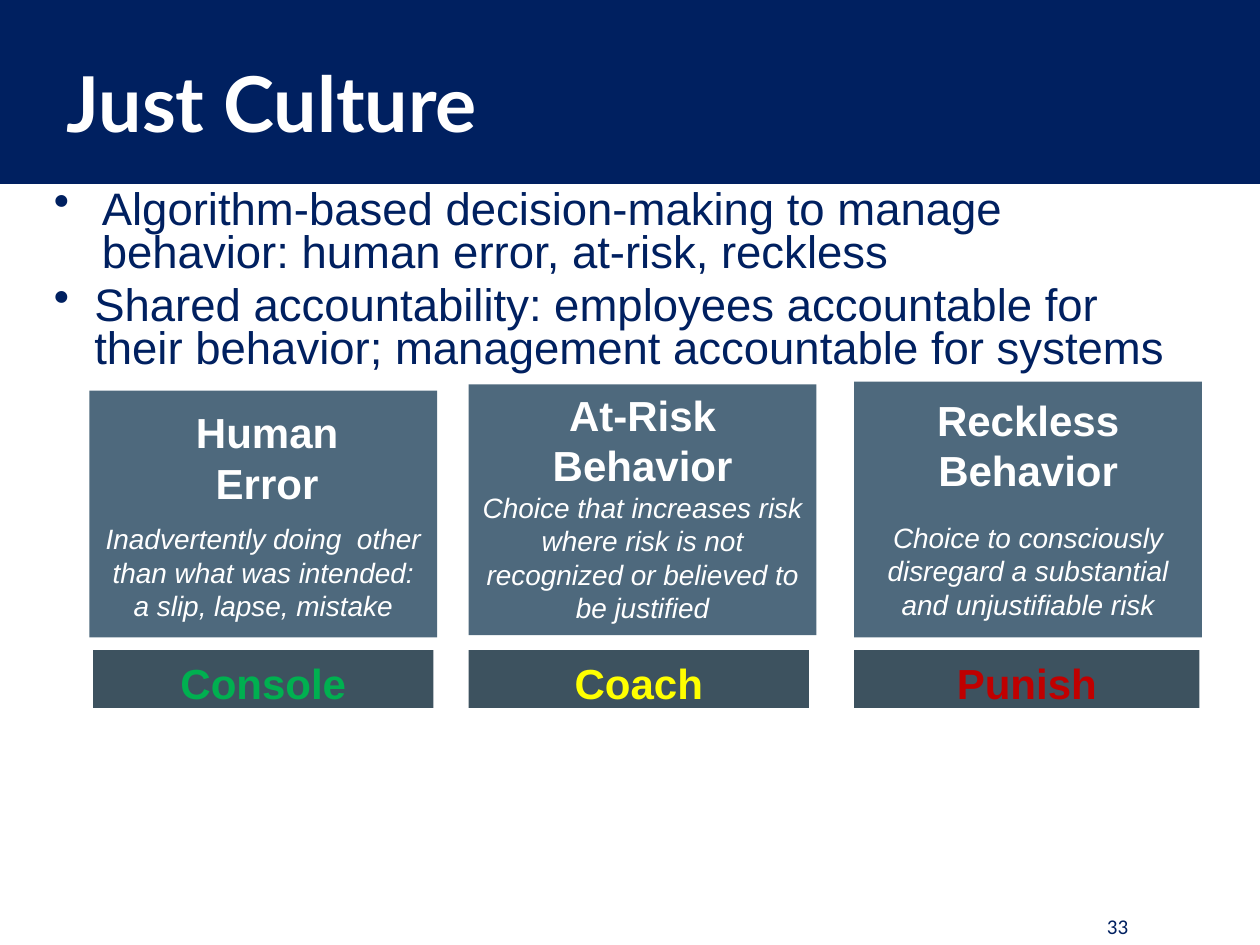
from lxml import etree
from pptx import Presentation
from pptx.dml.color import RGBColor
from pptx.enum import shapes, text
from pptx.oxml import ns
from pptx.util import Inches, Pt

NAVY = RGBColor(0x00, 0x20, 0x60)
WHITE = RGBColor(0xFF, 0xFF, 0xFF)
SLATE = RGBColor(0x4E, 0x69, 0x7D)
DARK_SLATE = RGBColor(0x3D, 0x52, 0x5F)
GREEN = RGBColor(0x00, 0xB0, 0x50)
YELLOW = RGBColor(0xFF, 0xFF, 0x00)
RED = RGBColor(0xC0, 0x00, 0x00)

BULLETS = [
    ("Algorithm-based decision-making to manage behavior: "
     "human error, at-risk, reckless", 0.38),
    ("Shared accountability: employees accountable for their behavior; "
     "management accountable for systems", 0.32),
]

# box, heading lines, heading (left, top), description, description top
CARDS = [
    ((0.71, 3.1, 2.76, 1.96), ["Human", "Error"], (0.03, 0.07),
     "Inadvertently doing  other than what was intended: a slip, lapse, mistake", 0.98),
    ((3.72, 3.05, 2.76, 1.99), ["At-Risk", "Behavior"], (0, -0.02),
     "Choice that increases risk where risk is not recognized "
     "or believed to be justified", 0.78),
    ((6.78, 3.03, 2.76, 2.03), ["Reckless", "Behavior"], (0, 0.04),
     "Choice to consciously disregard a substantial and unjustifiable risk", 1.04),
]

RESPONSES = [
    ("Console", GREEN, 0.74, 2.7),
    ("Coach", YELLOW, 3.72, 2.7),
    ("Punish", RED, 6.78, 2.74),
]


def add_rect(slide, box, color):
    """Add a plain filled rectangle."""
    sp = slide.shapes.add_shape(shapes.MSO_SHAPE.RECTANGLE, *map(Inches, box))
    sp.shadow.inherit = False
    sp.fill.solid()
    sp.fill.fore_color.rgb = color
    sp.line.fill.background()
    return sp


def write(sp, lines, size, color, name="Arial", bold=False, italic=False,
          align=text.PP_ALIGN.CENTER, anchor=text.MSO_ANCHOR.TOP, insets=(0.11, 0.06)):
    """Fill a shape with evenly styled paragraphs and return its text frame."""
    tf = sp.text_frame
    tf.word_wrap = True
    tf.vertical_anchor = anchor
    tf.margin_left = tf.margin_right = Inches(insets[0])
    tf.margin_top = tf.margin_bottom = Inches(insets[1])
    for i, line in enumerate(lines):
        p = tf.paragraphs[0] if i == 0 else tf.add_paragraph()
        p.text = line
        p.alignment = align
        p.font.name = name
        p.font.size = Pt(size)
        p.font.bold = bold
        p.font.italic = italic
        p.font.color.rgb = color
    return tf


def add_text(slide, box, lines, size, color, **style):
    """Add a text box with evenly styled paragraphs."""
    sp = slide.shapes.add_textbox(*map(Inches, box))
    return write(sp, lines, size, color, **style)


def add_header(slide, box, title):
    """Add the title band."""
    left, top, width, height = box
    add_rect(slide, box, NAVY)
    add_text(slide, (left + 0.43, top + 0.18, width - 0.75, height - 0.21), [title],
             44, WHITE, name="Lato", bold=True, align=text.PP_ALIGN.LEFT,
             anchor=text.MSO_ANCHOR.MIDDLE, insets=(0.1, 0.05))


def add_bullets(slide, box, items):
    """Add the bulleted statements with hanging indents."""
    tf = add_text(slide, box, [item for item, _ in items], 26, NAVY,
                  align=text.PP_ALIGN.LEFT, insets=(0.1, 0.05))
    for p, (_, margin) in zip(tf.paragraphs, items):
        p.line_spacing = 0.8
        p.space_before = Pt(5)
        pPr = p._p.get_or_add_pPr()
        pPr.set("marL", str(Inches(margin)))
        pPr.set("indent", str(Inches(-0.38)))
        bullet = etree.Element(ns.qn("a:buChar"), char="•")
        pPr.insert_element_before(bullet, "a:tabLst", "a:defRPr", "a:extLst")


def add_card(slide, box, heading, offset, description, description_top):
    """Add one behavior card with its heading and description."""
    left, top, width, height = box
    add_rect(slide, box, SLATE)
    add_text(slide, (left + offset[0], top + offset[1], width, 0.94),
             heading, 24, WHITE, bold=True)
    add_text(slide, (left, top + description_top, width, height - description_top),
             [description], 16, WHITE, italic=True)


def add_response(slide, box, label, color):
    """Add the management response below a card."""
    write(add_rect(slide, box, DARK_SLATE), [label], 24, color, bold=True)


def add_page_number(slide, box, number):
    """Add the page number."""
    add_text(slide, box, [number], 12, NAVY, name="Calibri",
             anchor=text.MSO_ANCHOR.MIDDLE, insets=(0.1, 0.05))


def main():
    """Build and save the slide."""
    prs = Presentation()
    prs.slide_width, prs.slide_height = Inches(10), Inches(7.5)
    slide = prs.slides.add_slide(prs.slide_layouts[6])
    add_header(slide, (0, 0, 10, 1.46), "Just Culture")
    add_page_number(slide, (8.58, 7.2, 0.58, 0.3), "33")
    add_bullets(slide, (0.33, 1.46, 9.25, 4.08), BULLETS)
    for card in CARDS:
        add_card(slide, *card)
    for label, color, left, width in RESPONSES:
        add_response(slide, (left, 5.16, width, 0.46), label, color)
    prs.save("out.pptx")


if __name__ == "__main__":
    main()
